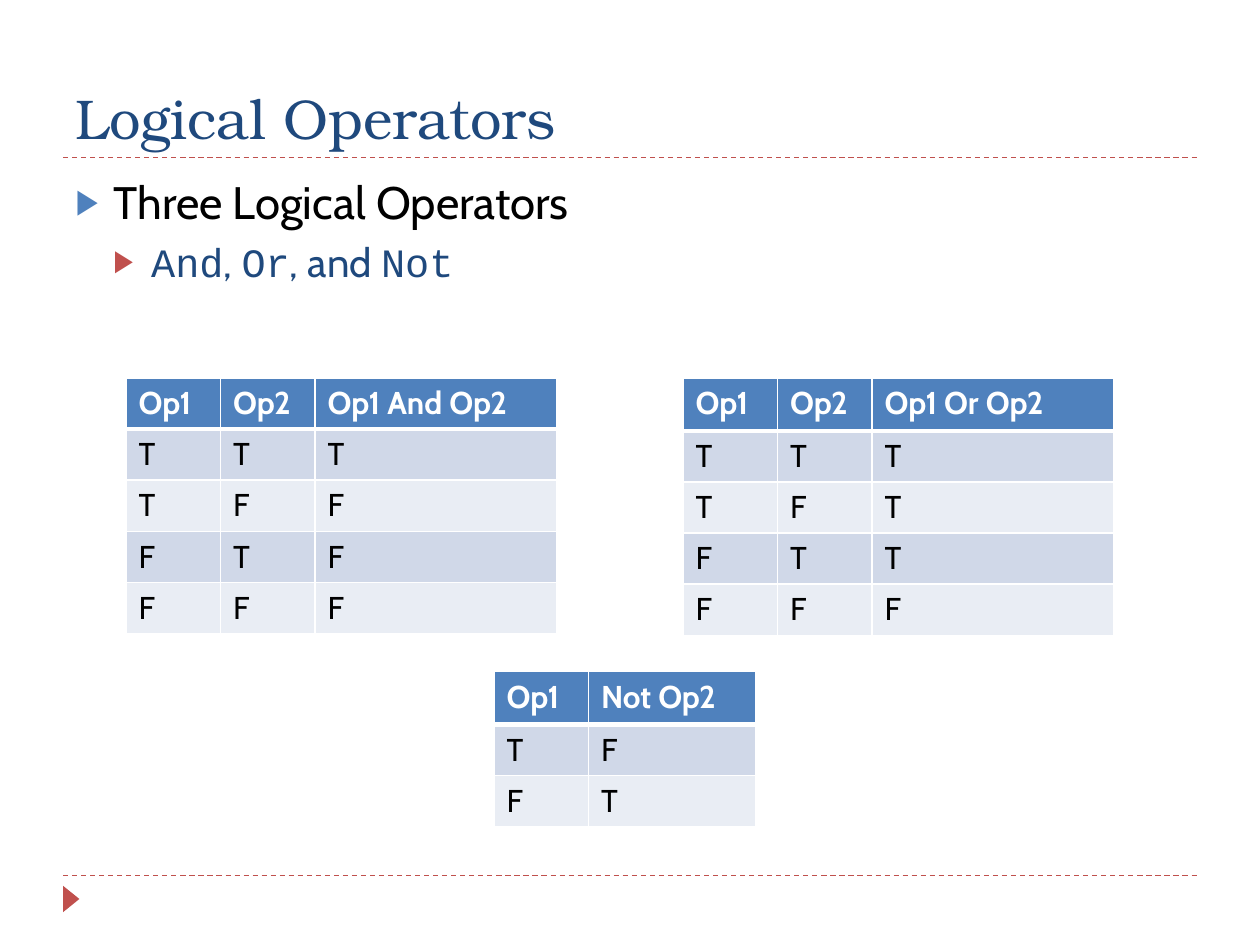
import pptx
import pptx.util
import pptx.dml.color
import pptx.enum.dml
import pptx.enum.shapes
import pptx.enum.text
import pptx.oxml
import pptx.oxml.ns
from lxml import etree

Inches, Pt = pptx.util.Inches, pptx.util.Pt
qn = pptx.oxml.ns.qn

# Content
TITLE = "Logical Operators"
SANS, MONO, SERIF = "Cabin", "Courier New", "TeX Gyre Bonum"
NAVY, BLUE, RED, WHITE, BLACK = "1F497D", "4F81BD", "C0504D", "FFFFFF", "000000"
BANDS = ["D0D8E8", "E9EDF4"]
# runs, level, size, colour, bullet colour, space before
ITEMS = [
    ([("Three Logical Operators", SANS)], 0, 26, BLACK, BLUE, 6),
    ([("And", MONO), (", ", SANS), ("Or", MONO), (", and ", SANS), ("Not", MONO)],
     1, 23, NAVY, RED, 5),
]
# left, top, header height, column widths, rows
TABLES = [
    (1, 3, 0.39, [0.75, 0.75, 1.92],
     [["Op1", "Op2", "Op1 And Op2"], "TTT", "TFF", "FTF", "FFF"]),
    (5.42, 3, 0.42, [0.75, 0.75, 1.92],
     [["Op1", "Op2", "Op1 Or Op2"], "TTT", "TFT", "FTT", "FFF"]),
    (3.92, 5.33, 0.42, [0.75, 1.33],
     [["Op1", "Not Op2"], "TF", "FT"]),
]
ROW = 0.39


def rgb(code):
    return pptx.dml.color.RGBColor.from_string(code)


def style(font, size, color, name=None, bold=False):
    font.size, font.bold = Pt(size), bold
    font.color.rgb = rgb(color)
    if name:
        font.name = name


def place(shape, left, top, width, height):
    shape.left, shape.top = Inches(left), Inches(top)
    shape.width, shape.height = Inches(width), Inches(height)


def bullet(para, level, color):
    props = para._p.get_or_add_pPr()
    props.set("marL", str(Inches(0.3 * (level + 1))))
    props.set("indent", str(Inches(-0.3)))
    tint = etree.SubElement(props, qn("a:buClr"))
    etree.SubElement(tint, qn("a:srgbClr"), val=color)
    etree.SubElement(props, qn("a:buSzPct"), val="76000")
    etree.SubElement(props, qn("a:buFont"), typeface="Arial")
    etree.SubElement(props, qn("a:buChar"), char="▶")


def border(cell, side, width):
    edge = etree.SubElement(cell._tc.get_or_add_tcPr(), qn("a:ln" + side), w=str(Pt(width)))
    fill = etree.SubElement(edge, qn("a:solidFill"))
    etree.SubElement(fill, qn("a:srgbClr"), val=WHITE)


def grid(left, top, head, widths, rows):
    heights = [head] + [ROW] * (len(rows) - 1)
    table = slide.shapes.add_table(
        len(rows), len(widths), Inches(left), Inches(top),
        Inches(sum(widths)), Inches(sum(heights))).table
    for col, width in zip(table.columns, widths):
        col.width = Inches(width)
    for r, (row, height) in enumerate(zip(rows, heights)):
        table.rows[r].height = Inches(height)
        for c, text in enumerate(row):
            cell = table.cell(r, c)
            for side in "LRTB":
                thick = (r, side) in [(0, "B"), (1, "T")]
                border(cell, side, 3 if thick else 1)
            cell.fill.solid()
            cell.fill.fore_color.rgb = rgb(BANDS[(r - 1) % 2] if r else BLUE)
            cell.text = text
            style(cell.text_frame.paragraphs[0].runs[0].font, 18,
                  BLACK if r else WHITE, SANS, r == 0)


deck = pptx.Presentation()
deck.slide_width, deck.slide_height = Inches(10), Inches(7.5)
slide = deck.slides.add_slide(deck.slide_layouts[1])

# Dashed rules
for y in (6.95, 1.25):
    rule = slide.shapes.add_connector(
        pptx.enum.shapes.MSO_CONNECTOR.STRAIGHT,
        Inches(0.5), Inches(y), Inches(9.5), Inches(y))
    rule.line.color.rgb = rgb(RED)
    rule.line.width = Pt(0.75)
    rule.line.dash_style = pptx.enum.dml.MSO_LINE.DASH
    etree.SubElement(rule._element.spPr, qn("a:effectLst"))

# Footer marker
mark = slide.shapes.add_shape(
    pptx.enum.shapes.MSO_SHAPE.ISOSCELES_TRIANGLE,
    Inches(0.46), Inches(7.07), Inches(0.21), Inches(0.13))
mark.rotation = 90
mark.shadow.inherit = False
mark.fill.solid()
mark.fill.fore_color.rgb = rgb(RED)
mark.line.fill.background()

# Title
title = slide.shapes.title
place(title, 0.5, 0.17, 9, 1.08)
title.text = TITLE
frame = title.text_frame
frame.auto_size = pptx.enum.text.MSO_AUTO_SIZE.NONE
frame.vertical_anchor = pptx.enum.text.MSO_ANCHOR.BOTTOM
frame.paragraphs[0].alignment = pptx.enum.text.PP_ALIGN.LEFT
style(frame.paragraphs[0].runs[0].font, 32, NAVY, SERIF)

# Bulleted list
body = slide.placeholders[1]
place(body, 0.5, 1.33, 9, 5.4)
frame = body.text_frame
frame.auto_size = pptx.enum.text.MSO_AUTO_SIZE.NONE
for i, (runs, level, size, color, tint, gap) in enumerate(ITEMS):
    para = frame.add_paragraph() if i else frame.paragraphs[0]
    para.level = level
    para.space_before = Pt(gap)
    bullet(para, level, tint)
    for text, face in runs:
        run = para.add_run()
        run.text = text
        style(run.font, size, color, face)

# Truth tables
for table in TABLES:
    grid(*table)

deck.save("out.pptx")
